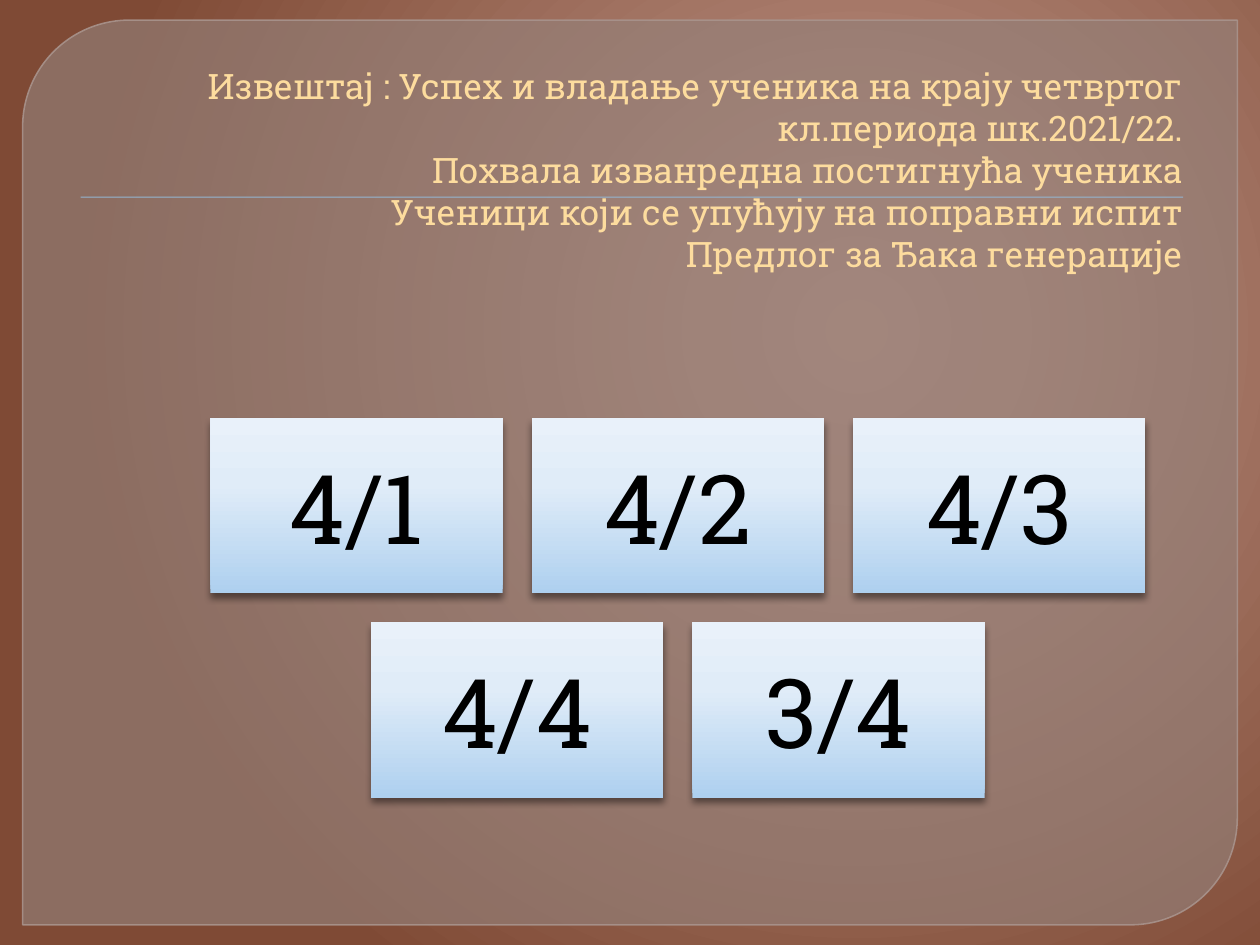
from dataclasses import dataclass

from lxml import etree
from pptx import Presentation
from pptx import oxml
from pptx.dml import color
from pptx.enum import shapes, text
from pptx.oxml import ns
from pptx.util import Inches, Pt


@dataclass(frozen=True)
class Theme:
    font: str = "Roboto Slab"
    head: str = "FDDC9E"
    ink: str = "000000"
    panel: str = "948079"
    edge: str = "A9948D"
    rule: str = "94B6D2"
    back: tuple = ((0, "BD9384"), (20, "B4897A"), (100, "7F4A35"))
    tile: tuple = ((0, "AED0EF"), (62, "E0ECF8"), (100, "E9F1FA"))
    head_size: int = 20
    tile_size: int = 55


THEME = Theme()
HEAD = [
    "Извештај : Успех и владање ученика на крају четвртог кл.периода шк.2021/22.",
    "Похвала изванредна постигнућа ученика",
    "Ученици који се упућују на поправни испит",
    "Предлог за Ђака генерације",
]
ROWS = [["4/1", "4/2", "4/3"], ["4/4", "3/4"]]


def rgb(code):
    return color.RGBColor.from_string(code)


def grad(stops, way):
    """Return a gradient fill; way is the XML for its direction."""
    marks = "".join(
        f'<a:gs pos="{pos * 1000}"><a:srgbClr val="{code}"/></a:gs>'
        for pos, code in stops)
    return oxml.parse_xml(
        f'<a:gradFill {ns.nsdecls("a")} rotWithShape="1">'
        f'<a:gsLst>{marks}</a:gsLst>{way}</a:gradFill>')


def fade(fill, share):
    """Set the opacity of a solid fill in percent."""
    tone = fill._xPr.find(".//" + ns.qn("a:srgbClr"))
    etree.SubElement(tone, ns.qn("a:alpha"), val=str(share * 1000))


def shade(shape, share, blur, drop):
    """Give the shape a black shadow that falls straight down."""
    shape.shadow.inherit = False
    box = shape._element.spPr.find(ns.qn("a:effectLst"))
    box.append(oxml.parse_xml(
        f'<a:outerShdw {ns.nsdecls("a")} blurRad="{Pt(blur)}" '
        f'dist="{Pt(drop)}" dir="5400000" rotWithShape="0">'
        f'<a:srgbClr val="000000"><a:alpha val="{share * 1000}"/>'
        '</a:srgbClr></a:outerShdw>'))


def style(para, size, code, align):
    para.alignment = align
    for run in para.runs:
        run.font.name = THEME.font
        run.font.size = Pt(size)
        run.font.color.rgb = rgb(code)


def add_back(slide):
    slide.background.fill.solid()
    old = slide.background.fill._xPr.find(ns.qn("a:solidFill"))
    way = ('<a:path path="circle"><a:fillToRect l="68000" t="35000" '
           'r="32000" b="65000"/></a:path>')
    old.getparent().replace(old, grad(THEME.back, way))


def add_panel(slide):
    panel = slide.shapes.add_shape(
        shapes.MSO_SHAPE.ROUND_2_DIAG_RECTANGLE,
        Inches(0.18), Inches(0.16), Inches(9.64), Inches(7.18))
    panel.adjustments[0] = 0.118
    panel.adjustments[1] = 0
    panel.shadow.inherit = False
    panel.fill.solid()
    panel.fill.fore_color.rgb = rgb(THEME.panel)
    fade(panel.fill, 65)
    panel.line.color.rgb = rgb(THEME.edge)
    panel.line.width = Pt(0.87)
    fade(panel.line.fill, 88)


def add_rule(slide):
    rule = slide.shapes.add_shape(
        shapes.MSO_SHAPE.RECTANGLE,
        Inches(0.64), Inches(1.56), Inches(8.75), Inches(0.01))
    rule.fill.solid()
    rule.fill.fore_color.rgb = rgb(THEME.rule)
    rule.line.fill.background()
    shade(rule, 75, 1, 1)


def add_head(slide):
    head = slide.shapes.title
    slide.shapes._spTree.append(head._element)  # in front of the rule
    head.left, head.top = Inches(0.55), Inches(0.36)
    head.width, head.height = Inches(8.94), Inches(3.55)
    frame = head.text_frame
    frame.word_wrap = True
    frame.auto_size = text.MSO_AUTO_SIZE.NONE
    frame.vertical_anchor = text.MSO_ANCHOR.TOP
    frame.margin_top = Inches(0.15)
    para = frame.paragraphs[0]
    para.text = "\v".join(HEAD)
    para.line_spacing = Pt(24)
    style(para, THEME.head_size, THEME.head, text.PP_ALIGN.RIGHT)


def add_tile(slide, label, left, top, width, height):
    tile = slide.shapes.add_shape(
        shapes.MSO_SHAPE.RECTANGLE,
        Inches(left), Inches(top), Inches(width), Inches(height))
    tile.fill.solid()
    old = tile._element.spPr.find(ns.qn("a:solidFill"))
    way = '<a:lin ang="16200000" scaled="0"/>'
    old.getparent().replace(old, grad(THEME.tile, way))
    tile.line.fill.background()
    shade(tile, 43, 4, 3)
    frame = tile.text_frame
    frame.word_wrap = True
    frame.vertical_anchor = text.MSO_ANCHOR.MIDDLE
    frame.margin_left = frame.margin_right = Inches(0.23)
    frame.margin_top = frame.margin_bottom = Inches(0.23)
    frame.text = label
    style(frame.paragraphs[0], THEME.tile_size, THEME.ink,
          text.PP_ALIGN.CENTER)


def add_tiles(slide):
    """Lay out each row of tiles around a common middle."""
    mid, top, width, height, gap = 5.38, 3.32, 2.32, 1.39, 0.23
    for row, labels in enumerate(ROWS):
        left = mid - (len(labels) * (width + gap) - gap) / 2
        for col, label in enumerate(labels):
            add_tile(slide, label, left + col * (width + gap),
                     top + row * (height + gap), width, height)


def main():
    deck = Presentation()
    deck.slide_width, deck.slide_height = Inches(10), Inches(7.5)
    slide = deck.slides.add_slide(deck.slide_layouts[5])
    # Backdrop
    add_back(slide)
    add_panel(slide)
    add_rule(slide)
    # Content
    add_head(slide)
    add_tiles(slide)
    deck.save("out.pptx")


if __name__ == "__main__":
    main()
